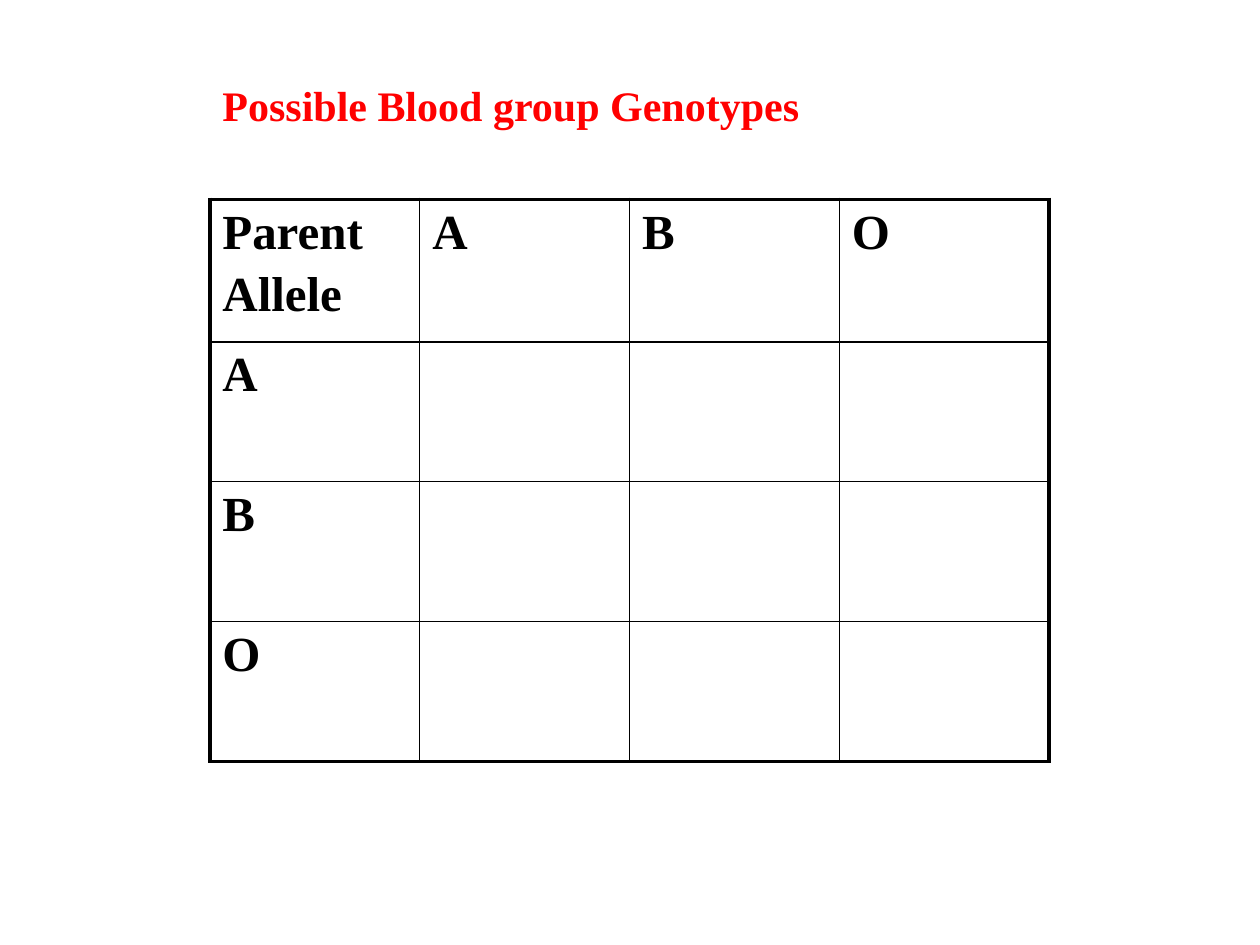
from lxml.etree import SubElement
from pptx import Presentation
from pptx.dml.color import RGBColor
from pptx.enum.text import MSO_ANCHOR, MSO_AUTO_SIZE as AutoSize, PP_ALIGN
from pptx.oxml.ns import qn
from pptx.util import Cm, Pt

TITLE = "Possible Blood group Genotypes"
ALLELES = ["A", "B", "O"]
GENOTYPES = [["Parent\nAllele", *ALLELES]] + [[allele, "", "", ""] for allele in ALLELES]
ROW_HEIGHTS = [2.87, 2.82, 2.82, 2.82]
COLUMN_WIDTH = 4.23
LEFT, TITLE_TOP, GRID_TOP = 4.23, 1.48, 4.02
OUTER, INNER = 2.25, 1


def color(hex_value):
    return RGBColor.from_string(hex_value)


def write(frame, text, size=28, hex_value="000000", font="Times New Roman", gap=4.5):
    frame.text = text
    frame.vertical_anchor = MSO_ANCHOR.TOP
    for index, paragraph in enumerate(frame.paragraphs):
        paragraph.alignment = PP_ALIGN.LEFT
        paragraph.space_before = Pt(gap if index else 0)
        for run in paragraph.runs:
            run.font.name, run.font.size, run.font.bold = font, Pt(size), True
            run.font.color.rgb = color(hex_value)


def add_border(cell, side, width, hex_value="000000"):
    properties = cell._tc.get_or_add_tcPr()
    line = SubElement(properties, qn(f"a:ln{side}"), w=str(Pt(width)))
    fill = SubElement(line, qn("a:solidFill"))
    SubElement(fill, qn("a:srgbClr"), val=hex_value)


def add_title(slide):
    title = slide.shapes.title
    title.left, title.top, title.width, title.height = Cm(LEFT), Cm(TITLE_TOP), Cm(12.14), Cm(1.27)
    write(title.text_frame, TITLE, size=24, hex_value="FF0000")
    title.text_frame.word_wrap = False
    title.text_frame.auto_size = AutoSize.SHAPE_TO_FIT_TEXT


def add_genotype_grid(slide):
    rows, columns = len(GENOTYPES), len(GENOTYPES[0])
    grid = slide.shapes.add_table(
        rows, columns, Cm(LEFT), Cm(GRID_TOP), Cm(COLUMN_WIDTH * columns), Cm(sum(ROW_HEIGHTS))
    ).table
    grid.first_row = grid.horz_banding = False
    for column in grid.columns:
        column.width = Cm(COLUMN_WIDTH)
    for r, (labels, height) in enumerate(zip(GENOTYPES, ROW_HEIGHTS)):
        grid.rows[r].height = Cm(height)
        for c, label in enumerate(labels):
            cell = grid.cell(r, c)
            write(cell.text_frame, label)
            edges = {"L": c == 0, "R": c == columns - 1, "T": r == 0, "B": r == rows - 1}
            for side, is_outer in edges.items():
                add_border(cell, side, OUTER if is_outer else INNER)
            cell.fill.background()


def main():
    """Build the slide of possible blood group genotypes."""
    deck = Presentation()
    deck.slide_width, deck.slide_height = Cm(25.4), Cm(19.05)
    slide = deck.slides.add_slide(deck.slide_layouts[5])
    add_genotype_grid(slide)
    add_title(slide)
    deck.save("out.pptx")


if __name__ == "__main__":
    main()
